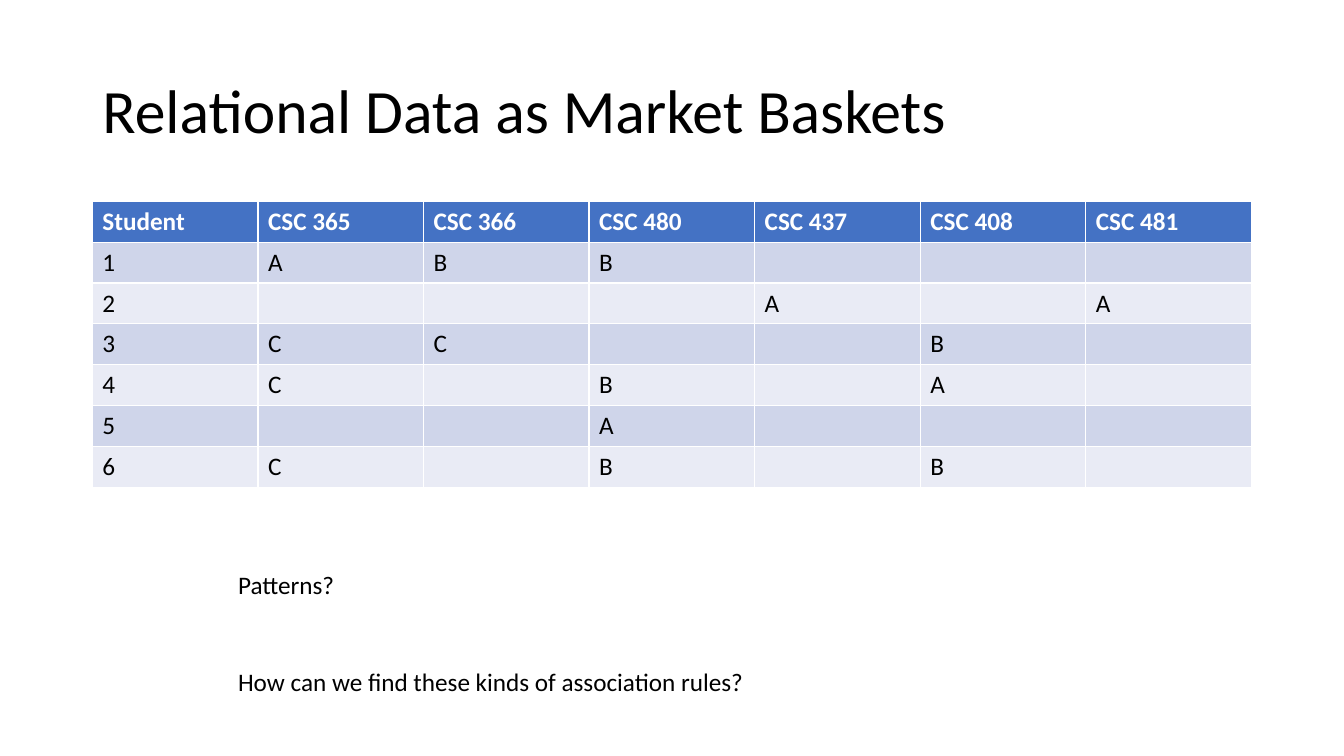
from pptx import Presentation
from pptx.dml.color import RGBColor
from pptx.enum.text import MSO_ANCHOR, MSO_AUTO_SIZE, PP_ALIGN
from pptx.util import Pt

FONT = "Calibri"
COLORS = {
    "text": "000000",
    "light": "FFFFFF",
    "head": "4472C4",
    "odd": "CFD5EA",
    "even": "E9EBF5",
}
GRADES = [
    ["Student", "CSC 365", "CSC 366", "CSC 480", "CSC 437", "CSC 408", "CSC 481"],
    ["1", "A", "B", "B", "", "", ""],
    ["2", "", "", "", "A", "", "A"],
    ["3", "C", "C", "", "", "B", ""],
    ["4", "C", "", "B", "", "A", ""],
    ["5", "", "", "A", "", "", ""],
    ["6", "C", "", "B", "", "B", ""],
]


def color(name):
    return RGBColor.from_string(COLORS[name])


def style(para, size, tone="text", bold=False):
    font = para.font
    font.name = FONT
    font.size = Pt(size)
    font.bold = bold
    font.color.rgb = color(tone)


def add_title(slide, text):
    title = slide.shapes.title
    title.left, title.top = Pt(66), Pt(28.8)
    title.width, title.height = Pt(828), Pt(104.4)
    frame = title.text_frame
    frame.text = text
    frame.vertical_anchor = MSO_ANCHOR.MIDDLE
    para = frame.paragraphs[0]
    para.alignment = PP_ALIGN.LEFT
    para.line_spacing = 0.9
    style(para, 44)


def add_grid(slide, data):
    rows, cols = len(data), len(data[0])
    height = Pt(29.2)
    # The default table style draws the white cell borders
    table = slide.shapes.add_table(
        rows, cols, Pt(66), Pt(143.75), Pt(828), height * rows
    ).table
    for r, values in enumerate(data):
        table.rows[r].height = height
        fill = "head" if r == 0 else "odd" if r % 2 else "even"
        for c, value in enumerate(values):
            cell = table.cell(r, c)
            cell.text = value
            cell.fill.solid()
            cell.fill.fore_color.rgb = color(fill)
            style(cell.text_frame.paragraphs[0], 18,
                  "text" if r else "light", r == 0)


def add_note(slide, text, top, width):
    box = slide.shapes.add_textbox(Pt(163), Pt(top), Pt(width), Pt(29))
    frame = box.text_frame
    frame.word_wrap = False
    frame.auto_size = MSO_AUTO_SIZE.SHAPE_TO_FIT_TEXT
    frame.text = text
    style(frame.paragraphs[0], 18)


def main():
    deck = Presentation()
    deck.slide_width, deck.slide_height = Pt(960), Pt(540)
    slide = deck.slides.add_slide(deck.slide_layouts[5])

    # Title and grades
    add_title(slide, "Relational Data as Market Baskets")
    add_grid(slide, GRADES)

    # Questions below the table
    add_note(slide, "Patterns?", 403, 84)
    add_note(slide, "How can we find these kinds of association rules?", 472.5, 380)

    deck.save("out.pptx")


if __name__ == "__main__":
    main()
